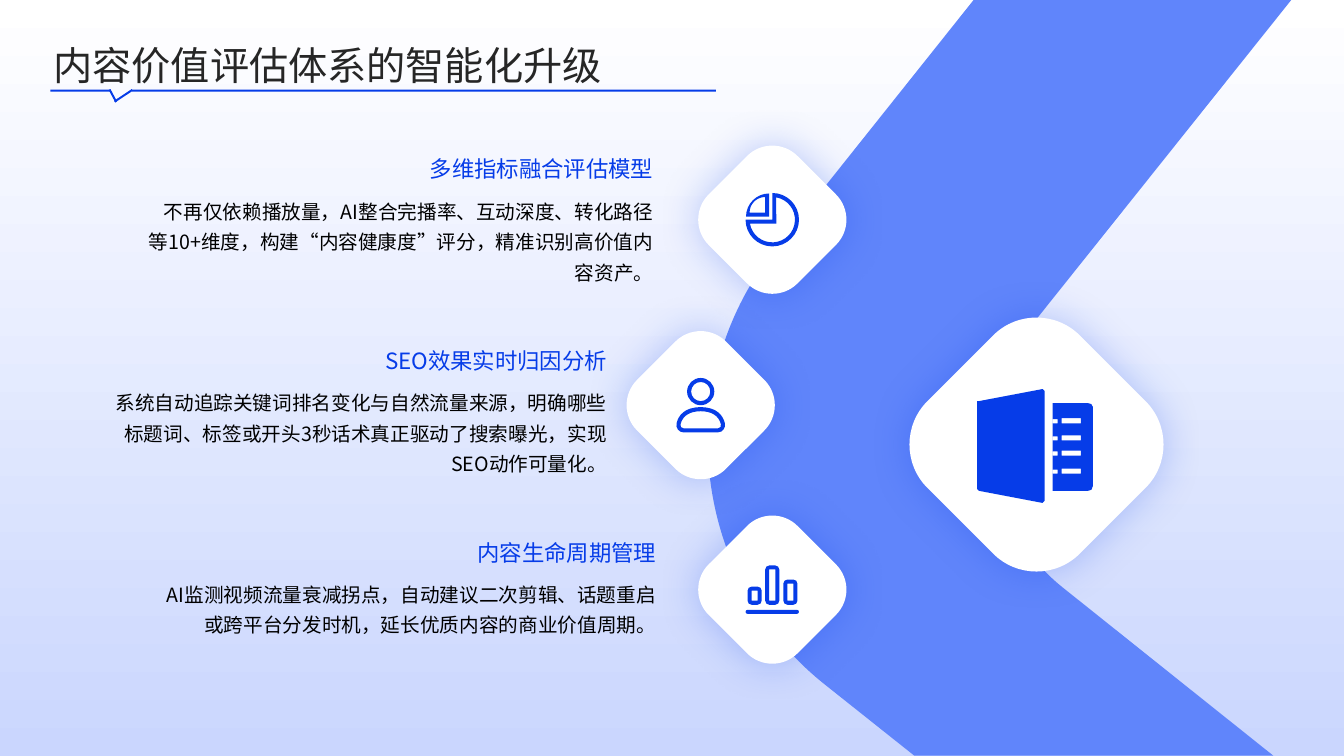
from dataclasses import dataclass
from math import ceil, cos, radians, sin, tan

from lxml import etree
from pptx import Presentation
from pptx.dml.color import RGBColor
from pptx.enum.shapes import MSO_SHAPE
from pptx.enum.text import MSO_ANCHOR, PP_ALIGN
from pptx.oxml.ns import qn
from pptx.util import Inches, Pt

RECT = MSO_SHAPE.RECTANGLE
TOP, BOTTOM = MSO_ANCHOR.TOP, MSO_ANCHOR.BOTTOM
LEFT, RIGHT = PP_ALIGN.LEFT, PP_ALIGN.RIGHT


@dataclass(frozen=True)
class Theme:
    font: str = "Noto Sans CJK SC"
    blue: str = "063CE8"
    band: str = "6085FB"
    white: str = "FFFFFF"
    haze: str = "CAD6FE"
    ink: str = "262626"
    black: str = "000000"
    title: int = 28
    heading: int = 16
    body: int = 14


THEME = Theme()
WIDTH, HEIGHT = 13.33, 7.5

# Content: heading, body, text left, heading top, tile centre
TITLE = "内容价值评估体系的智能化升级"
POINTS = [
    ("多维指标融合评估模型",
     "不再仅依赖播放量，AI整合完播率、互动深度、转化路径等10+维度，构建“内容健康度”评分，精准识别高价值内容资产。",
     1.43, 1.22, (7.66, 2.18)),
    ("SEO效果实时归因分析",
     "系统自动追踪关键词排名变化与自然流量来源，明确哪些标题词、标签或开头3秒话术真正驱动了搜索曝光，实现SEO动作可量化。",
     0.97, 3.12, (6.95, 4.02)),
    ("内容生命周期管理",
     "AI监测视频流量衰减拐点，自动建议二次剪辑、话题重启或跨平台分发时机，延长优质内容的商业价值周期。",
     1.46, 5.02, (7.66, 5.85)),
]
TEXT_WIDTH, HEADING_HEIGHT, BODY_HEIGHT, BODY_OFFSET = 5.05, 0.59, 1.11, 0.69
TILE_HALF, HUB_HALF, HUB = 0.735, 1.26, (10.28, 4.41)
# Title rule: left, top, width, rotation
RULE = [(0.5, 0.89, 0.59, 0), (1.31, 0.89, 5.79, 0),
        (1.05, 0.94, 0.14, 61.9), (1.12, 0.94, 0.21, 326.5)]


# An outline is a list of steps: (point,) is a line, (control, control, point) a curve
def lines(*points):
    return [(point,) for point in points]


def curves(points):
    return [tuple(points[:1])] + [tuple(points[i:i + 3]) for i in range(1, len(points), 3)]


def arc(x, y, radius, start, end):
    count = ceil((end - start) / 90)
    turn = radians(end - start) / count
    pull = 4 / 3 * tan(turn / 4)
    points = [(x + radius * cos(radians(start)), y + radius * sin(radians(start)))]
    for i in range(count):
        a, b = radians(start) + i * turn, radians(start) + (i + 1) * turn
        points += [(x + radius * (cos(a) - pull * sin(a)), y + radius * (sin(a) + pull * cos(a))),
                   (x + radius * (cos(b) + pull * sin(b)), y + radius * (sin(b) - pull * cos(b))),
                   (x + radius * cos(b), y + radius * sin(b))]
    return curves(points)


def box(left, top, right, bottom, radius=0.0):
    if not radius:
        return lines((left, top), (right, top), (right, bottom), (left, bottom))
    corners = [(right - radius, bottom - radius), (left + radius, bottom - radius),
               (left + radius, top + radius), (right - radius, top + radius)]
    return [step for i, (x, y) in enumerate(corners)
            for step in arc(x, y, radius, 90 * i, 90 * i + 90)]


def mirrored(half):
    return curves(half) + curves([(-x, y) for x, y in reversed(half)])


def diamond(half):
    corner = [(-.34, -.86), (-.245, -.955), (-.12, -1), (0, -1),
              (.12, -1), (.245, -.955), (.34, -.86)]
    outline = []
    for _ in range(4):
        outline += curves([(x * half, y * half) for x, y in corner])
        corner = [(-y, x) for x, y in corner]
    return outline


def rotated(outline, centre, degrees):
    c, s = cos(radians(degrees)), sin(radians(degrees))
    cx, cy = centre
    return [tuple((cx + (x - cx) * c - (y - cy) * s, cy + (x - cx) * s + (y - cy) * c)
                  for x, y in step) for step in outline]


# Icons, measured from the tile centre
PIE = [
    lines((-.03, -.03)) + arc(-.03, -.03, .23, 180, 270),
    lines((-.07, -.07)) + arc(-.07, -.07, .155, 180, 270),
    lines((0, 0)) + arc(0, 0, .265, -90, 180),
    lines((.04, .04)) + arc(0, 0, .225, -80, 170),
]
PERSON = [
    arc(0, -.135, .135, 0, 360),
    arc(0, -.135, .095, 0, 360),
    mirrored([(0, .02), (.16, .02), (.22, .1), (.24, .18), (.25, .22), (.22, .27), (.17, .27)]),
    mirrored([(0, .06), (.1, .06), (.18, .1), (.2, .19), (.21, .21), (.19, .23), (.17, .23)]),
]
BARS = [box(-.265, .2, .265, .24, .02)]
for bar_x, bar_top in [(-.175, -.03), (0, -.24), (.18, -.1)]:
    BARS += [box(bar_x - .07, bar_top, bar_x + .07, .15, .04),
             box(bar_x - .03, bar_top + .04, bar_x + .03, .11)]
DOCUMENT = [
    lines((.06, -.55), (.08, -.53), (.08, .56), (.06, .58), (-.57, .46),
          (-.59, .44), (-.59, -.43), (-.57, -.43)),
    lines((.16, -.41), (.51, -.41), (.545, -.4), (.56, -.37), (.56, .41),
          (.545, .45), (.51, .46), (.16, .46)),
]
for row in (-.26, -.09, .06, .24):
    DOCUMENT += [box(.25, row, .44, row + .05), box(.16, row + .01, .21, row + .05)]
ICONS = [PIE, PERSON, BARS]

BAND_TURN, BAND_CENTRE = 38.5, (11.06, 3.85)
BAND = (lines((9.66, 0), (12.81, 0))
        + curves([(10.24, 3.22), (9.6, 4.02), (9.74, 5.19), (10.54, 5.83)])
        + lines((12.63, HEIGHT), (9.07, HEIGHT))
        + curves([(8.19, 6.8), (6.85, 5.74), (6.63, 3.79), (7.7, 2.46)]))


# Drawing helpers
def paint(shape, colour):
    shape.shadow.inherit = False
    shape.fill.solid()
    shape.fill.fore_color.rgb = RGBColor.from_string(colour)
    shape.line.fill.background()


def draw(shapes, contours, colour, centre=(0, 0)):
    placed = [[[(Inches(x + centre[0]), Inches(y + centre[1])) for x, y in step]
               for step in contour] for contour in contours]
    builder = shapes.build_freeform(*placed[0][0][-1], scale=1.0)
    for i, contour in enumerate(placed):
        if i:
            builder.move_to(*contour[0][-1])
        builder.add_line_segments([step[-1] for step in contour[1:]], close=True)
    figure = builder.convert_to_shape()
    # Bend the straight segments that have control points
    segments = [node for node in figure.element.spPr.find(".//" + qn("a:path"))
                if node.tag != qn("a:close")]
    for node, step in zip(segments, [step for contour in placed for step in contour]):
        if len(step) == 3:
            node.tag = qn("a:cubicBezTo")
            for i, (x, y) in enumerate(step[:2]):
                node.insert(i, etree.Element(qn("a:pt"), x=str(x - figure.left),
                                             y=str(y - figure.top)))
    paint(figure, colour)
    return figure


def draw_tile(shapes, centre, half, icon):
    tile = draw(shapes, [diamond(half)], THEME.white, centre)
    effects = tile.element.spPr.find(qn("a:effectLst"))
    glow = etree.SubElement(effects, qn("a:outerShdw"), blurRad=str(Pt(30)),
                            dist="0", dir="0", algn="ctr", rotWithShape="0")
    tint = etree.SubElement(glow, qn("a:srgbClr"), val=THEME.blue)
    etree.SubElement(tint, qn("a:alpha"), val="25000")
    draw(shapes, icon, THEME.blue, centre)


def write(shapes, words, place, size, colour, align=RIGHT, anchor=TOP):
    frame = shapes.add_textbox(*map(Inches, place)).text_frame
    frame.word_wrap = True
    frame.vertical_anchor = anchor
    frame.margin_left = frame.margin_right = frame.margin_top = frame.margin_bottom = 0
    paragraph = frame.paragraphs[0]
    paragraph.alignment = align
    paragraph.line_spacing = 1.3
    run = paragraph.add_run()
    run.text = words
    run.font.name = THEME.font
    run.font.size = Pt(size)
    run.font.color.rgb = RGBColor.from_string(colour)
    etree.SubElement(run.font._element, qn("a:ea"), typeface=THEME.font)


def main():
    deck = Presentation()
    deck.slide_width, deck.slide_height = Inches(WIDTH), Inches(HEIGHT)
    shapes = deck.slides.add_slide(deck.slide_layouts[6]).shapes

    # Backdrop and band
    backdrop = shapes.add_shape(RECT, 0, 0, deck.slide_width, deck.slide_height)
    paint(backdrop, THEME.white)
    backdrop.fill.gradient()
    backdrop.fill.gradient_angle = 270
    for stop, share, colour in zip(backdrop.fill.gradient_stops, (0, 1),
                                   (THEME.white, THEME.haze)):
        stop.position = share
        stop.color.rgb = RGBColor.from_string(colour)
    band = draw(shapes, [rotated(BAND, BAND_CENTRE, -BAND_TURN)], THEME.band)
    band.rotation = BAND_TURN

    # Tiles with icons
    for point, icon in zip(POINTS, ICONS):
        draw_tile(shapes, point[-1], TILE_HALF, icon)
    draw_tile(shapes, HUB, HUB_HALF, DOCUMENT)

    # Texts
    for heading, body, left, top, _ in POINTS:
        write(shapes, body, (left, top + BODY_OFFSET, TEXT_WIDTH, BODY_HEIGHT),
              THEME.body, THEME.black)
        write(shapes, heading, (left, top, TEXT_WIDTH, HEADING_HEIGHT),
              THEME.heading, THEME.blue, anchor=BOTTOM)
    write(shapes, TITLE, (0.53, 0.27, 11.35, 0.59), THEME.title, THEME.ink, LEFT)

    # Title rule
    rule = shapes.add_group_shape()
    for left, top, width, turn in RULE:
        stroke = rule.shapes.add_shape(RECT, *map(Inches, (left, top, width, 0.02)))
        paint(stroke, THEME.blue)
        stroke.rotation = turn

    deck.save("out.pptx")


if __name__ == "__main__":
    main()
